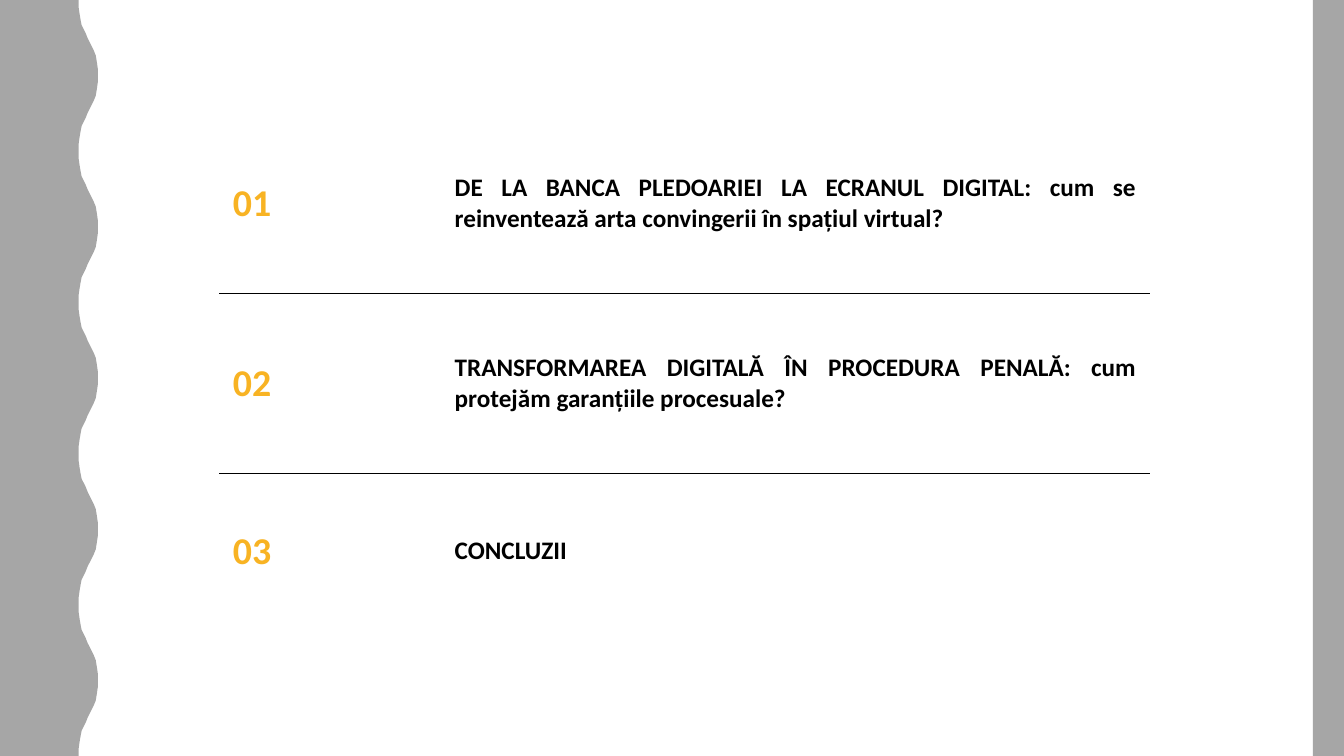
from lxml import etree
from pptx import Presentation
from pptx import util as u
from pptx.dml.color import RGBColor
from pptx.enum import shapes, text
from pptx.oxml.ns import qn

PX = 9144  # 100 px to the inch
WIDTH, HEIGHT = 1333, 750
GREY, AMBER, BLACK = "A6A6A6", "F8B323", "000000"

# Edge of the wave from its trough to its crest
HALF_WAVE = [(78, 0), (78, 7), (79, 14), (80, 20), (81, 25), (83, 29), (85, 33),
             (87, 38), (89, 42), (91, 46), (93, 50), (95, 55), (96, 61), (97, 68), (97, 75)]
PERIOD = 150

TOPICS = [
    ("01", "DE LA BANCA PLEDOARIEI LA ECRANUL DIGITAL: cum se reinventează arta "
           "convingerii în spațiul virtual?"),
    ("02", "TRANSFORMAREA DIGITALĂ ÎN PROCEDURA PENALĂ: cum protejăm garanțiile procesuale?"),
    ("03", "CONCLUZII"),
]
COLUMNS = [220, 702]
ROWS = [179, 179, 154]


def px(n):
    return u.Emu(n * PX)


def color(value):
    return RGBColor.from_string(value)


def paint(sp, fill):
    sp.shadow.inherit = False
    sp.fill.solid()
    sp.fill.fore_color.rgb = color(fill)
    sp.line.fill.background()


def add_wave(s):
    falling = [(x, PERIOD - y) for x, y in reversed(HALF_WAVE[:-1])]
    edge = [(x, y + top) for top in range(0, HEIGHT, PERIOD) for x, y in HALF_WAVE + falling]
    builder = s.shapes.build_freeform(0, 0, scale=PX)
    builder.add_line_segments(edge + [(0, HEIGHT)], close=True)
    paint(builder.convert_to_shape(), GREY)


def add_band(s, left, width):
    sp = s.shapes.add_shape(shapes.MSO_SHAPE.RECTANGLE, px(left), 0, px(width), px(HEIGHT))
    paint(sp, GREY)


def add_border(cell, side):
    """Draw a thin rule on one side of a cell: lnT or lnB."""
    tc_pr = cell._tc.get_or_add_tcPr()
    ln = etree.SubElement(tc_pr, qn("a:" + side), w=str(u.Pt(0.5)))
    fill = etree.SubElement(ln, qn("a:solidFill"))
    etree.SubElement(fill, qn("a:srgbClr"), val=BLACK)


def fill_cell(cell, words, size, ink, align):
    cell.fill.background()
    cell.vertical_anchor = text.MSO_ANCHOR.MIDDLE
    cell.margin_left = cell.margin_right = cell.margin_top = cell.margin_bottom = px(13)
    p = cell.text_frame.paragraphs[0]
    p.alignment = align
    r = p.add_run()
    r.text = words
    r.font.name = "Calibri"
    r.font.size = u.Pt(size)
    r.font.bold = True
    r.font.color.rgb = color(ink)


def add_agenda(s, left, top):
    frame = s.shapes.add_table(len(ROWS), len(COLUMNS), px(left), px(top),
                               px(sum(COLUMNS)), px(sum(ROWS)))
    table = frame.table
    table.first_row = table.horz_banding = False
    for column, width in zip(table.columns, COLUMNS):
        column.width = px(width)
    for i, (number, topic) in enumerate(TOPICS):
        table.rows[i].height = px(ROWS[i])
        for cell in table.rows[i].cells:
            if i > 0:
                add_border(cell, "lnT")
            if i < len(TOPICS) - 1:
                add_border(cell, "lnB")
        fill_cell(table.cell(i, 0), number, 27, AMBER, text.PP_ALIGN.LEFT)
        fill_cell(table.cell(i, 1), topic, 18, BLACK, text.PP_ALIGN.JUSTIFY)


def main():
    prs = Presentation()
    prs.slide_width, prs.slide_height = px(WIDTH), px(HEIGHT)
    s = prs.slides.add_slide(prs.slide_layouts[6])
    add_wave(s)
    add_band(s, 1302, 31)
    add_agenda(s, 218, 112)
    prs.save("out.pptx")


if __name__ == "__main__":
    main()
